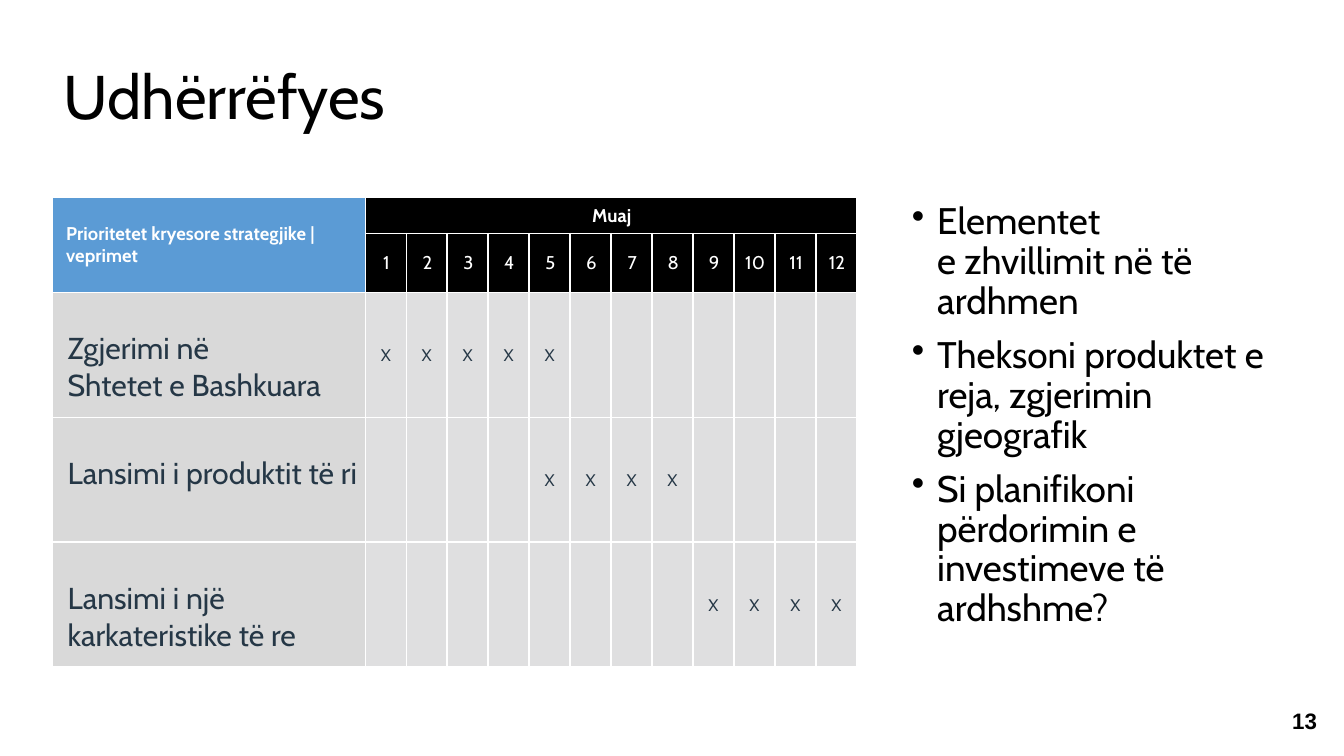
from lxml import etree
from pptx import Presentation
from pptx.dml.color import RGBColor
from pptx.enum.text import MSO_ANCHOR, PP_ALIGN
from pptx.oxml.ns import qn
from pptx.util import Cm, Pt

BLACK = RGBColor(0x00, 0x00, 0x00)
WHITE = RGBColor(0xFF, 0xFF, 0xFF)
BLUE = RGBColor(0x5B, 0x9B, 0xD5)
NAVY = RGBColor(0x25, 0x37, 0x46)
ACTION_GREY = RGBColor(0xD9, 0xD9, 0xD9)
MONTH_GREY = RGBColor(0xDF, 0xDF, 0xE0)
LEFT, CENTER = PP_ALIGN.LEFT, PP_ALIGN.CENTER
TOP, MIDDLE, BOTTOM = MSO_ANCHOR.TOP, MSO_ANCHOR.MIDDLE, MSO_ANCHOR.BOTTOM

FONT = "Cabin"
MONTHS = 12
ACTION_WIDTH, MONTH_WIDTH = Cm(6.58), Cm(0.86)
ROW_HEIGHTS = [Cm(0.76), Cm(1.24), Cm(2.62), Cm(2.62), Cm(2.62)]
HEADER_MARGINS = (0.03, 0.15, 0, 0.15)
MARK_MARGINS = (0.03, 0.03, 0.03, 0)
# action, first month, last month
ACTIONS = [
    ("Zgjerimi në\vShtetet e Bashkuara", 1, 5),
    ("Lansimi i produktit të ri", 5, 8),
    ("Lansimi i një karkateristike të re", 9, 12),
]
POINTS = [
    "Elementet\ve zhvillimit në të ardhmen",
    "Theksoni produktet e reja, zgjerimin gjeografik",
    "Si planifikoni\vpërdorimin e investimeve të ardhshme?",
]


def set_font(p, size, color, bold=False, name=FONT):
    p.font.name = name
    p.font.size = Pt(size)
    p.font.bold = bold
    p.font.color.rgb = color


def add_text_frame(slide, box, anchor):
    tf = slide.shapes.add_textbox(*box).text_frame
    tf.word_wrap = True
    tf.vertical_anchor = anchor
    return tf


def add_title(slide, box, text):
    p = add_text_frame(slide, box, MIDDLE).paragraphs[0]
    p.text = text
    p.line_spacing = 0.9
    set_font(p, 36.7, BLACK)


def add_bullets(slide, box, points):
    tf = add_text_frame(slide, box, TOP)
    for i, point in enumerate(points):
        p = tf.add_paragraph() if i else tf.paragraphs[0]
        p.text = point
        p.line_spacing = 0.9
        p.space_before = Pt(8.3)
        set_font(p, 22, BLACK)
        pPr = p._p.get_or_add_pPr()
        pPr.set("marL", str(Cm(0.53)))
        pPr.set("indent", str(-Cm(0.53)))
        bullet = etree.Element(qn("a:buChar"), char="•")
        pPr.find(qn("a:defRPr")).addprevious(bullet)


def add_slide_number(slide, box, number):
    tf = add_text_frame(slide, box, BOTTOM)
    tf.margin_left = tf.margin_top = tf.margin_right = tf.margin_bottom = 0
    p = tf.paragraphs[0]
    p.text = number
    p.alignment = CENTER
    set_font(p, 13.3, BLACK, True, "Arial")


def add_borders(cell):
    tcPr = cell._tc.get_or_add_tcPr()
    for side in ("lnL", "lnR", "lnT", "lnB"):
        ln = etree.SubElement(tcPr, qn(f"a:{side}"), w=str(Pt(1)))
        fill = etree.SubElement(ln, qn("a:solidFill"))
        etree.SubElement(fill, qn("a:srgbClr"), val=str(WHITE))


def fill_cell(cell, text, fill, margins, size, color,
              bold=False, align=CENTER, anchor=MIDDLE):
    cell.fill.solid()
    cell.fill.fore_color.rgb = fill
    (cell.margin_left, cell.margin_top,
     cell.margin_right, cell.margin_bottom) = map(Cm, margins)
    cell.vertical_anchor = anchor
    p = cell.text_frame.paragraphs[0]
    p.text = text
    p.alignment = align
    set_font(p, size, color, bold)


def add_roadmap(slide, left, top):
    width = ACTION_WIDTH + MONTHS * MONTH_WIDTH
    table = slide.shapes.add_table(len(ROW_HEIGHTS), MONTHS + 1, left, top,
                                   width, sum(ROW_HEIGHTS)).table
    for i, column in enumerate(table.columns):
        column.width = MONTH_WIDTH if i else ACTION_WIDTH
    for row, height in zip(table.rows, ROW_HEIGHTS):
        row.height = height
    for cell in table.iter_cells():
        add_borders(cell)

    table.cell(0, 0).merge(table.cell(1, 0))
    table.cell(0, 1).merge(table.cell(0, MONTHS))
    fill_cell(table.cell(0, 0), "Prioritetet kryesore strategjike | veprimet",
              BLUE, (0.3, 0.15, 0, 0.15), 11, WHITE, True, LEFT)
    fill_cell(table.cell(0, 1), "Muaj", BLACK, HEADER_MARGINS, 11, WHITE, True)
    for month in range(1, MONTHS + 1):
        fill_cell(table.cell(1, month), str(month), BLACK,
                  HEADER_MARGINS, 11, WHITE)

    for row, (action, first, last) in enumerate(ACTIONS, start=2):
        fill_cell(table.cell(row, 0), action, ACTION_GREY,
                  (0.33, 0.8, 0.03, 0), 18, NAVY, align=LEFT, anchor=TOP)
        for month in range(1, MONTHS + 1):
            mark = "X" if first <= month <= last else ""
            fill_cell(table.cell(row, month), mark, MONTH_GREY,
                      MARK_MARGINS, 10, NAVY)


def main():
    prs = Presentation()
    prs.slide_width, prs.slide_height = Cm(28.22), Cm(15.88)
    slide = prs.slides.add_slide(prs.slide_layouts[6])
    add_title(slide, (Cm(1.09), Cm(0.81), Cm(23.9), Cm(2.57)), "Udhërrëfyes")
    add_roadmap(slide, Cm(1.09), Cm(4.14))
    add_bullets(slide, (Cm(18.9), Cm(4.14), Cm(8.2), Cm(9.96)), POINTS)
    add_slide_number(slide, (Cm(26.57), Cm(14.88), Cm(1.65), Cm(0.53)), "13")
    prs.save("out.pptx")


if __name__ == "__main__":
    main()
